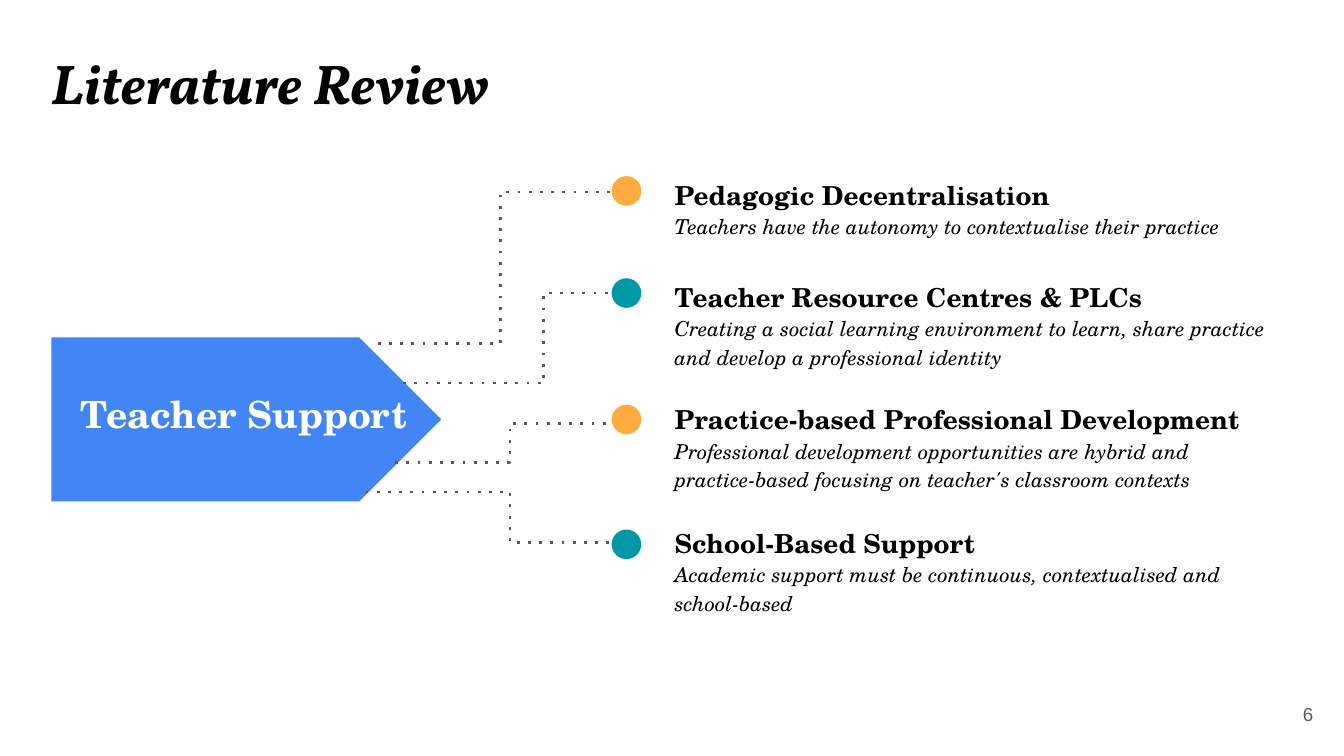
from dataclasses import dataclass

from lxml.etree import SubElement
from pptx import Presentation
from pptx.dml.color import RGBColor
from pptx.enum.shapes import MSO_CONNECTOR as Connector, MSO_SHAPE as Shape
from pptx.enum.text import MSO_ANCHOR as Anchor, MSO_AUTO_SIZE as AutoSize, PP_ALIGN as Align
from pptx.oxml.ns import qn
from pptx.util import Cm, Pt


@dataclass(frozen=True)
class Theme:
    black: str = "000000"
    white: str = "FFFFFF"
    grey: str = "595959"
    blue: str = "4285F4"
    orange: str = "FFAB40"
    teal: str = "0097A7"
    title_font: str = "Vollkorn"
    text_font: str = "TeX Gyre Schola"
    number_font: str = "Arial"
    title_size: int = 30
    hub_size: int = 20
    heading_size: int = 14
    detail_size: int = 11
    number_size: int = 10
    line_width: float = 1.5


@dataclass(frozen=True)
class Box:
    """A rectangle in centimetres."""
    left: float
    top: float
    width: float
    height: float

    def lengths(self):
        return Cm(self.left), Cm(self.top), Cm(self.width), Cm(self.height)


@dataclass(frozen=True)
class Topic:
    heading: str
    detail: str
    color: str
    text_top: float
    text_height: float
    dot_top: float
    # The line leaves the arrow at start, turns at bend_x and arrives at line_y.
    start: tuple
    bend_x: float
    line_y: float


THEME = Theme()
TITLE = Box(0.71, 0.66, 10.46, 1.75)
HUB = Box(0.97, 6.38, 7.37, 3.1)
PAGE_NUMBER = Box(23.55, 12.95, 1.52, 1.09)
TEXT_LEFT, TEXT_WIDTH = 12.5, 11.84
DOT_LEFT, DOT_SIZE = 11.56, 0.56

TOPICS = [
    Topic("Pedagogic Decentralisation",
          "Teachers have the autonomy to contextualise their practice",
          THEME.orange, 3.05, 1.57, 3.33, (7.14, 6.5), 9.46, 3.63),
    Topic("Teacher Resource Centres & PLCs",
          "Creating a social learning environment to learn, share practice "
          "and develop a professional identity",
          THEME.teal, 4.98, 2.18, 5.26, (7.62, 7.24), 10.28, 5.54),
    Topic("Practice-based Professional Development",
          "Professional development opportunities are hybrid and "
          "practice-based focusing on teacher's classroom contexts",
          THEME.orange, 7.29, 2.18, 7.65, (7.47, 8.74), 9.64, 8.0),
    Topic("School-Based Support",
          "Academic support must be continuous, contextualised and school-based",
          THEME.teal, 9.63, 2.18, 10.01, (6.91, 9.3), 9.64, 10.26),
]


def format_frame(frame, anchor=Anchor.TOP):
    frame.word_wrap = True
    frame.auto_size = AutoSize.NONE
    frame.vertical_anchor = anchor
    frame.margin_left = frame.margin_right = Cm(0.25)
    frame.margin_top = frame.margin_bottom = Cm(0.25)


def format_paragraph(paragraph, font, size, color, bold=False, italic=False, align=Align.LEFT):
    paragraph.alignment = align
    paragraph.font.name = font
    paragraph.font.size = Pt(size)
    paragraph.font.bold = bold
    paragraph.font.italic = italic
    paragraph.font.color.rgb = RGBColor.from_string(color)


def add_text_box(slide, box, anchor=Anchor.TOP):
    """Add an empty text box and return its first paragraph."""
    frame = slide.shapes.add_textbox(*box.lengths()).text_frame
    format_frame(frame, anchor)
    return frame.paragraphs[0]


def add_filled_shape(slide, kind, box, color):
    shape = slide.shapes.add_shape(kind, *box.lengths())
    shape.shadow.inherit = False
    shape.fill.solid()
    shape.fill.fore_color.rgb = RGBColor.from_string(color)
    shape.line.fill.background()


def place_title(slide, box, text):
    title = slide.shapes.title
    title.left, title.top, title.width, title.height = box.lengths()
    format_frame(title.text_frame)
    title.text_frame.text = text
    format_paragraph(title.text_frame.paragraphs[0], THEME.title_font, THEME.title_size,
                     THEME.black, bold=True, italic=True)


def add_hub(slide, box, text):
    """Add the large arrow that the topics branch from."""
    add_filled_shape(slide, Shape.PENTAGON, box, THEME.blue)
    paragraph = add_text_box(slide, Box(box.left + 0.3, box.top + 0.76, box.width - 0.54, 1.2))
    paragraph.text = text
    format_paragraph(paragraph, THEME.text_font, THEME.hub_size, THEME.white, bold=True)


def add_dotted_elbow(slide, start, end, bend_x):
    points = [Cm(value) for value in (*start, *end)]
    connector = slide.shapes.add_connector(Connector.ELBOW, *points)
    connector.line.color.rgb = RGBColor.from_string(THEME.grey)
    connector.line.width = Pt(THEME.line_width)

    properties = connector._element.spPr
    SubElement(properties.find(qn("a:ln")), qn("a:prstDash"), val="dot")
    SubElement(properties, qn("a:effectLst"))
    bend = round(100000 * (bend_x - start[0]) / (end[0] - start[0]))
    adjustments = properties.find(qn("a:prstGeom")).get_or_add_avLst()
    SubElement(adjustments, qn("a:gd"), name="adj1", fmla=f"val {bend}")


def add_topic(slide, box, topic):
    """Add one branch: its line, its dot and its text in the given box."""
    dot = Box(DOT_LEFT, topic.dot_top, DOT_SIZE, DOT_SIZE)
    end = (dot.left + dot.width / 2, topic.line_y)
    add_dotted_elbow(slide, topic.start, end, topic.bend_x)
    add_filled_shape(slide, Shape.OVAL, dot, topic.color)

    paragraph = add_text_box(slide, box)
    paragraph.line_spacing = 1.15
    format_paragraph(paragraph, THEME.text_font, THEME.heading_size, THEME.black, bold=True)
    paragraph.add_run().text = topic.heading
    paragraph.add_line_break()
    detail = paragraph.add_run()
    detail.text = topic.detail
    detail.font.size = Pt(THEME.detail_size)
    detail.font.bold = False
    detail.font.italic = True


def add_page_number(slide, box, number):
    paragraph = add_text_box(slide, box, Anchor.MIDDLE)
    paragraph.text = str(number)
    format_paragraph(paragraph, THEME.number_font, THEME.number_size, THEME.grey,
                     align=Align.RIGHT)


def main():
    presentation = Presentation()
    presentation.slide_width, presentation.slide_height = Cm(25.4), Cm(14.29)
    slide = presentation.slides.add_slide(presentation.slide_layouts[5])

    place_title(slide, TITLE, "Literature Review")
    add_hub(slide, HUB, "Teacher Support")
    for topic in TOPICS:
        add_topic(slide, Box(TEXT_LEFT, topic.text_top, TEXT_WIDTH, topic.text_height), topic)
    add_page_number(slide, PAGE_NUMBER, 6)

    presentation.save("out.pptx")


if __name__ == "__main__":
    main()
